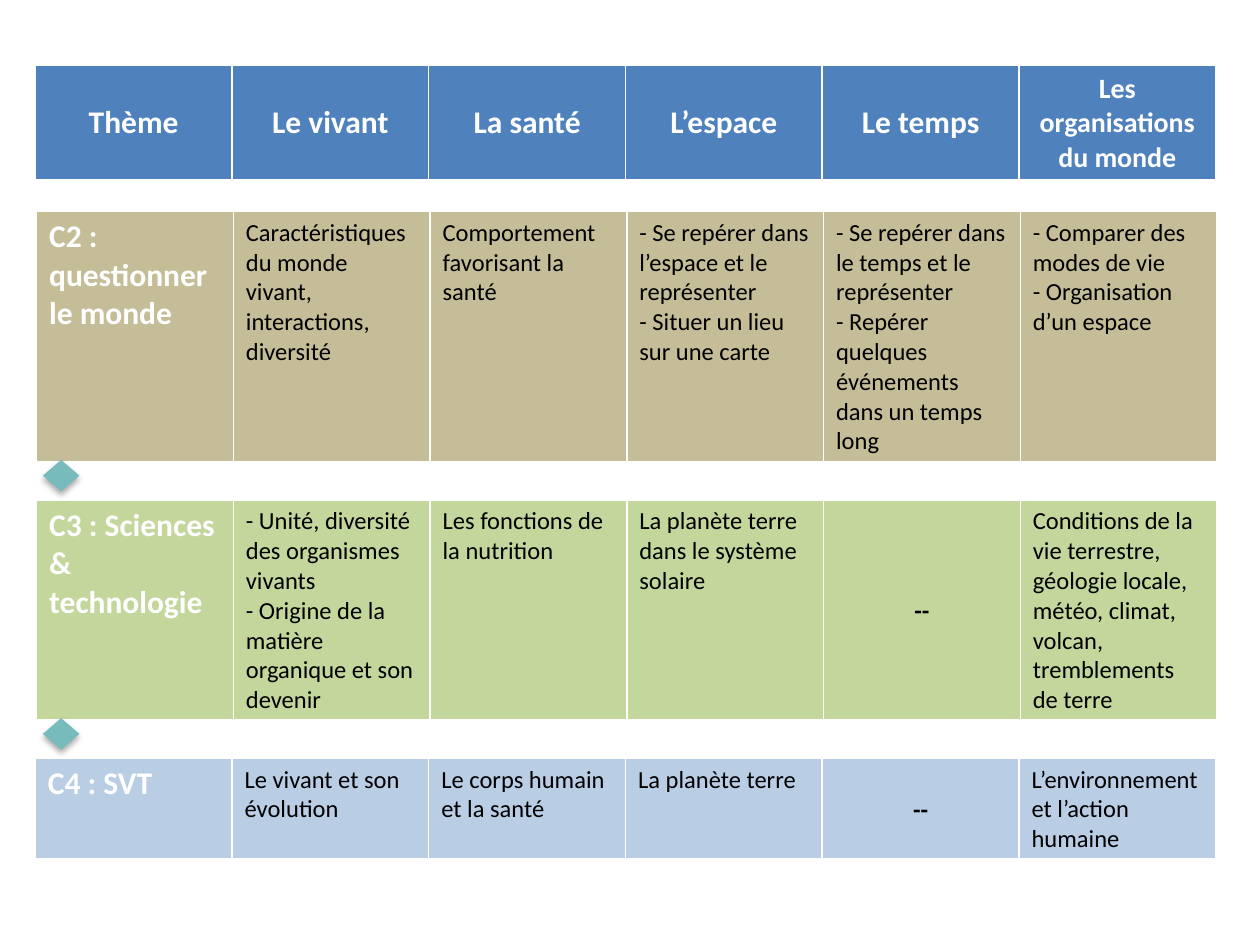
import pptx
import pptx.util
import pptx.dml.color
import pptx.enum.shapes
import pptx.enum.text
import pptx.oxml
import pptx.oxml.ns

PX = 9144  # 100 px to the inch
FONT = "Calibri"
COLORS = {
    "header": "4F81BD", "cycle2": "C4BD97", "cycle3": "C3D69B", "cycle4": "B9CDE5",
    "arrow": "78BBBC", "white": "FFFFFF", "black": "000000",
}
COLUMN_COUNT = 6
NO_TOPIC = "--"

HEADER = ["Thème", "Le vivant", "La santé", "L’espace", "Le temps",
          "Les organisations du monde"]
# Each band: colour, box (left, top, width, height), cell texts
CYCLES = [
    ("cycle2", (29, 168, 937, 197), [
        "C2 : questionner le monde",
        "Caractéristiques du monde vivant,\ninteractions, diversité",
        "Comportement favorisant la santé",
        "- Se repérer dans l’espace et le représenter\n- Situer un lieu sur une carte",
        "- Se repérer dans le temps et le représenter\n"
        "- Repérer quelques événements dans un temps long",
        "- Comparer des modes de vie\n- Organisation d’un espace"]),
    ("cycle3", (29, 397, 937, 173), [
        "C3 : Sciences & technologie",
        "- Unité, diversité des organismes vivants\n"
        "- Origine de la matière organique et son devenir",
        "Les fonctions de la nutrition",
        "La planète terre dans le système solaire",
        NO_TOPIC,
        "Conditions de la vie terrestre, géologie locale, météo, climat, volcan, "
        "tremblements de terre"]),
    ("cycle4", (28, 602, 937, 80), [
        "C4 : SVT",
        "Le vivant et son évolution",
        "Le corps humain et la santé",
        "La planète terre",
        NO_TOPIC,
        "L’environnement et l’action humaine"]),
]


def rgb(name):
    return pptx.dml.color.RGBColor.from_string(COLORS[name])


def scaled(box):
    return [value * PX for value in box]


def set_borders(cell):
    """White rules around a cell, the bottom one heavier."""
    properties = cell._tc.get_or_add_tcPr()
    for index, (side, points) in enumerate((("L", 1), ("R", 1), ("T", 1), ("B", 3))):
        properties.insert(index, pptx.oxml.parse_xml(
            f'<a:ln{side} {pptx.oxml.ns.nsdecls("a")} w="{points * 12700}"><a:solidFill>'
            f'<a:srgbClr val="{COLORS["white"]}"/></a:solidFill></a:ln{side}>'))


def fill_cell(cell, text, fill, size, color, bold, centered):
    cell.fill.solid()
    cell.fill.fore_color.rgb = rgb(fill)
    set_borders(cell)
    anchors = pptx.enum.text.MSO_ANCHOR
    cell.vertical_anchor = anchors.MIDDLE if centered else anchors.TOP
    cell.text_frame.text = text
    for para in cell.text_frame.paragraphs:
        if centered:
            para.alignment = pptx.enum.text.PP_ALIGN.CENTER
        para.font.name = FONT
        para.font.size = pptx.util.Pt(size)
        para.font.bold = bold
        para.font.color.rgb = rgb(color)


def add_band(page, box):
    """One-row table with equal columns; returns its cells."""
    table = page.shapes.add_table(1, COLUMN_COUNT, *scaled(box)).table
    table.rows[0].height = box[3] * PX
    for column in table.columns:
        column.width = box[2] * PX // COLUMN_COUNT
    return list(table.rows[0].cells)


def add_header(page, box):
    for cell, text in zip(add_band(page, box), HEADER):
        size = 16 if text == HEADER[-1] else 18
        fill_cell(cell, text, "header", size, "white", True, True)


def add_cycle(page, box, fill, texts):
    label, *topics = add_band(page, box)
    fill_cell(label, texts[0], fill, 18, "white", True, False)
    for cell, text in zip(topics, texts[1:]):
        empty = text == NO_TOPIC
        fill_cell(cell, text, fill, 14, "black", empty, empty)


def add_link_arrow(page, box):
    """Shadowed double arrow between two cycles."""
    arrow = page.shapes.add_shape(
        pptx.enum.shapes.MSO_SHAPE.UP_DOWN_ARROW, *scaled(box))
    arrow.fill.solid()
    arrow.fill.fore_color.rgb = rgb("arrow")
    arrow.line.fill.background()
    arrow.shadow.inherit = False
    effects = arrow._element.spPr.find(pptx.oxml.ns.qn("a:effectLst"))
    effects.append(pptx.oxml.parse_xml(
        f'<a:outerShdw {pptx.oxml.ns.nsdecls("a")} blurRad="44450" dist="27940" '
        f'dir="5400000" rotWithShape="0"><a:srgbClr val="{COLORS["black"]}">'
        f'<a:alpha val="32000"/></a:srgbClr></a:outerShdw>'))


def main():
    deck = pptx.Presentation()
    deck.slide_width, deck.slide_height = 1000 * PX, 750 * PX
    page = deck.slides.add_slide(deck.slide_layouts[6])

    # Theme headings, then one band per cycle
    add_header(page, (28, 52, 937, 90))
    for fill, box, texts in CYCLES:
        add_cycle(page, box, fill, texts)

    # Arrows hang under every cycle but the last
    for _, (left, top, width, height), _ in CYCLES[:-1]:
        add_link_arrow(page, (34, top + height, 29, 25))

    deck.save("out.pptx")


if __name__ == "__main__":
    main()
